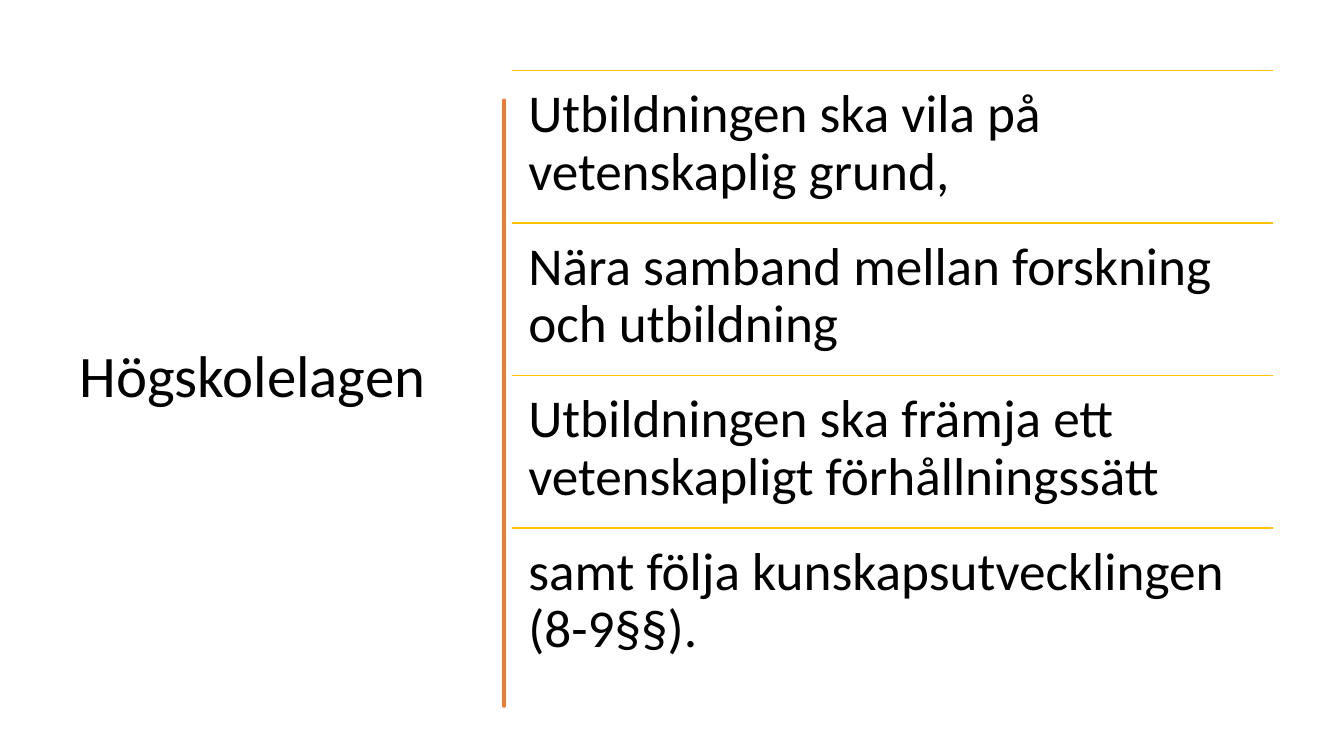
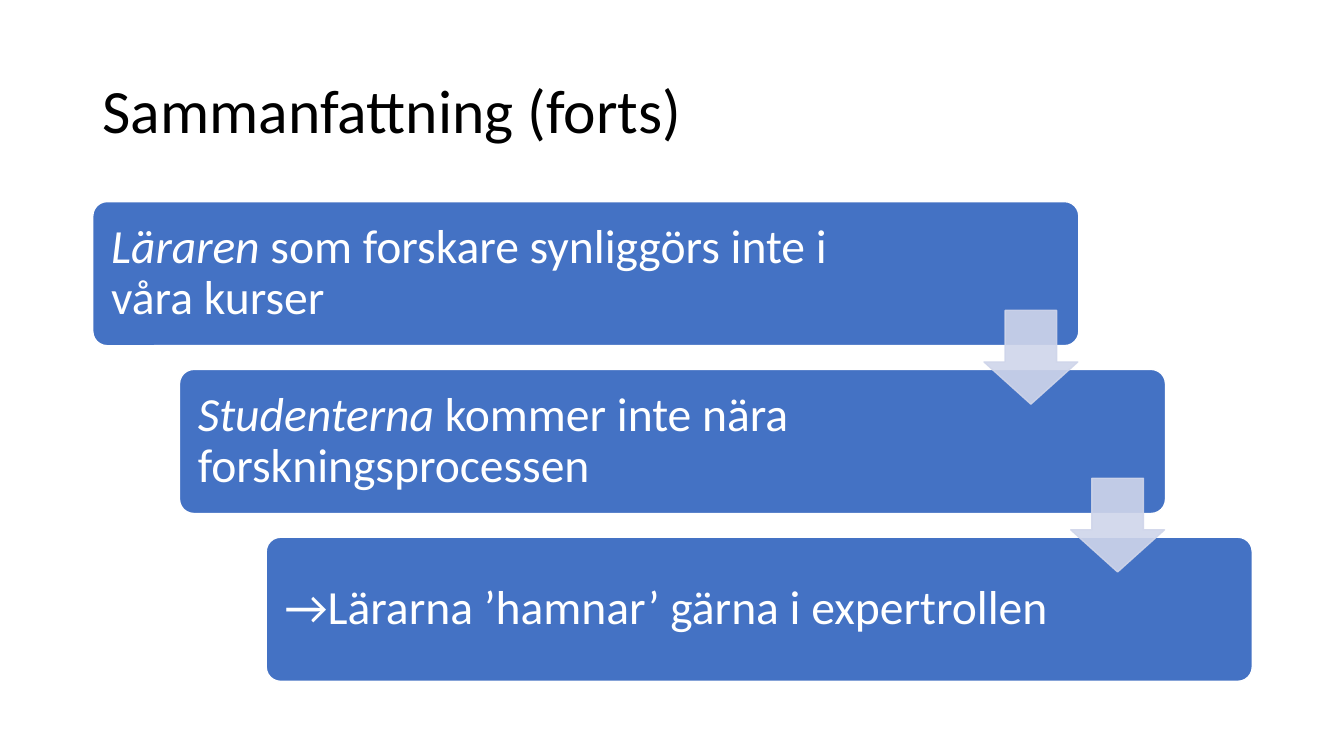
from lxml import etree
from pptx import Presentation
from pptx.dml.color import RGBColor
from pptx.enum.shapes import MSO_CONNECTOR, MSO_SHAPE
from pptx.enum.text import MSO_ANCHOR, PP_ALIGN
from pptx.oxml.ns import qn
from pptx.util import Inches, Pt

STRAIGHT = MSO_CONNECTOR.STRAIGHT
ROUNDED = MSO_SHAPE.ROUNDED_RECTANGLE
DOWN_ARROW = MSO_SHAPE.DOWN_ARROW
TOP, MIDDLE = MSO_ANCHOR.TOP, MSO_ANCHOR.MIDDLE
LEFT = PP_ALIGN.LEFT

# Shared style
FONT = "Calibri"
BLACK, WHITE = "000000", "FFFFFF"
ORANGE, GOLD = "ED7D31", "FFC000"
BLUE, PALE_BLUE = "4472C4", "CFD5EA"
TITLE_INSETS = (0.1, 0.05, 0.1, 0.05)

# Content of slide 1
LAW_TITLE = "Högskolelagen"
LAW_POINTS = [
    "Utbildningen ska vila på vetenskaplig grund,",
    "Nära samband mellan forskning och utbildning",
    "Utbildningen ska främja ett vetenskapligt förhållningssätt",
    "samt följa kunskapsutvecklingen (8-9§§).",
]
ROW_LEFT, ROW_TOP, ROW_WIDTH, ROW_HEIGHT = 5.08, 0.7, 7.55, 1.51
ROW_PITCH = 1.513

# Outline of the hand-drawn divider: down the right edge, up the left edge
DIVIDER = [
    (4.75, 0.84), (4.76, 1.15), (4.74, 1.75), (4.75, 2.26), (4.75, 2.94),
    (4.76, 3.35), (4.75, 3.6), (4.76, 4.0), (4.75, 4.36), (4.73, 4.7),
    (4.75, 5.1), (4.765, 5.45), (4.75, 5.84), (4.745, 6.1), (4.75, 6.76),
    (4.73, 6.76), (4.72, 6.4), (4.73, 6.13), (4.73, 5.57), (4.72, 5.15),
    (4.73, 4.77), (4.72, 4.5), (4.73, 4.15), (4.73, 3.86), (4.72, 3.6),
    (4.73, 3.35), (4.73, 2.5), (4.73, 2.1), (4.72, 1.7), (4.74, 1.2),
    (4.73, 0.84),
]

# Content of slide 2: (text, italic) runs for each step
SUMMARY_TITLE = "Sammanfattning (forts)"
STEPS = [
    [("Läraren", True), (" som forskare synliggörs inte i våra kurser", False)],
    [("Studenterna", True), (" kommer inte nära forskningsprocessen", False)],
    [("→Lärarna ’hamnar’ gärna i expertrollen", False)],
]
CARD_LEFT, CARD_TOP, CARD_WIDTH, CARD_HEIGHT = 0.92, 2, 9.78, 1.43
STEP_X, STEP_Y = 0.86, 1.665
ARROW_DX, ARROW_DY, ARROW_SIZE = 8.84, 1.08, 0.93


def rgb(color):
    return RGBColor.from_string(color)


def paint(shape, fill, line, width):
    shape.shadow.inherit = False
    shape.fill.solid()
    shape.fill.fore_color.rgb = rgb(fill)
    shape.line.color.rgb = rgb(line)
    shape.line.width = Pt(width)


def set_text(shape, runs, size, color, anchor, insets):
    frame = shape.text_frame
    frame.word_wrap = True
    frame.vertical_anchor = anchor
    (frame.margin_left, frame.margin_top,
     frame.margin_right, frame.margin_bottom) = map(Inches, insets)
    para = frame.paragraphs[0]
    para.alignment = LEFT
    para.line_spacing = 0.9
    for text, italic in runs:
        span = para.add_run()
        span.text = text
        span.font.name = FONT
        span.font.size = Pt(size)
        span.font.italic = italic
        span.font.color.rgb = rgb(color)


def add_text(page, area, text, size, anchor, insets):
    box = page.shapes.add_textbox(*map(Inches, area))
    set_text(box, [(text, False)], size, BLACK, anchor, insets)


def add_title(page, area, text, size):
    add_text(page, area, text, size, MIDDLE, TITLE_INSETS)


def add_rule(page, left, top, width):
    rule = page.shapes.add_connector(
        STRAIGHT, Inches(left), Inches(top), Inches(left + width), Inches(top))
    rule.line.color.rgb = rgb(GOLD)
    rule.line.width = Pt(1)
    etree.SubElement(rule.element.spPr, qn("a:effectLst"))


def add_divider(page):
    builder = page.shapes.build_freeform(*DIVIDER[0], scale=Inches(1))
    builder.add_line_segments(DIVIDER[1:], close=True)
    paint(builder.convert_to_shape(), ORANGE, ORANGE, 3.25)


def add_card(page, left, top, runs):
    card = page.shapes.add_shape(
        ROUNDED, *map(Inches, (left, top, CARD_WIDTH, CARD_HEIGHT)))
    card.adjustments[0] = 0.1
    paint(card, BLUE, WHITE, 1)
    set_text(card, runs, 34, WHITE, MIDDLE, (0.14, 0.14, 1.94, 0.14))


def add_arrow(page, left, top):
    arrow = page.shapes.add_shape(
        DOWN_ARROW, *map(Inches, (left, top, ARROW_SIZE, ARROW_SIZE)))
    arrow.adjustments[0] = 0.55
    arrow.adjustments[1] = 0.45
    paint(arrow, PALE_BLUE, PALE_BLUE, 1)
    for color in arrow.element.spPr.iter(qn("a:srgbClr")):
        etree.SubElement(color, qn("a:alpha")).set("val", "90000")


def build_law(page):
    add_title(page, (0.69, 0.7, 3.74, 6.11), LAW_TITLE, 42)
    add_divider(page)
    for index, text in enumerate(LAW_POINTS):
        top = ROW_TOP + index * ROW_PITCH
        add_rule(page, ROW_LEFT, top, ROW_WIDTH)
        add_text(page, (ROW_LEFT, top, ROW_WIDTH, ROW_HEIGHT),
                 text, 38, TOP, (0.16,) * 4)


def build_summary(page):
    add_title(page, (0.92, 0.4, 11.5, 1.45), SUMMARY_TITLE, 44)
    corners = [(CARD_LEFT + index * STEP_X, CARD_TOP + index * STEP_Y)
               for index in range(len(STEPS))]
    for (left, top), runs in zip(corners, STEPS):
        add_card(page, left, top, runs)
    # Arrows lie over the cards they link
    for left, top in corners[:-1]:
        add_arrow(page, left + ARROW_DX, top + ARROW_DY)


def main():
    deck = Presentation()
    deck.slide_width, deck.slide_height = Inches(13.33), Inches(7.5)
    for build in (build_law, build_summary):
        build(deck.slides.add_slide(deck.slide_layouts[6]))
    deck.save("out.pptx")


if __name__ == "__main__":
    main()
